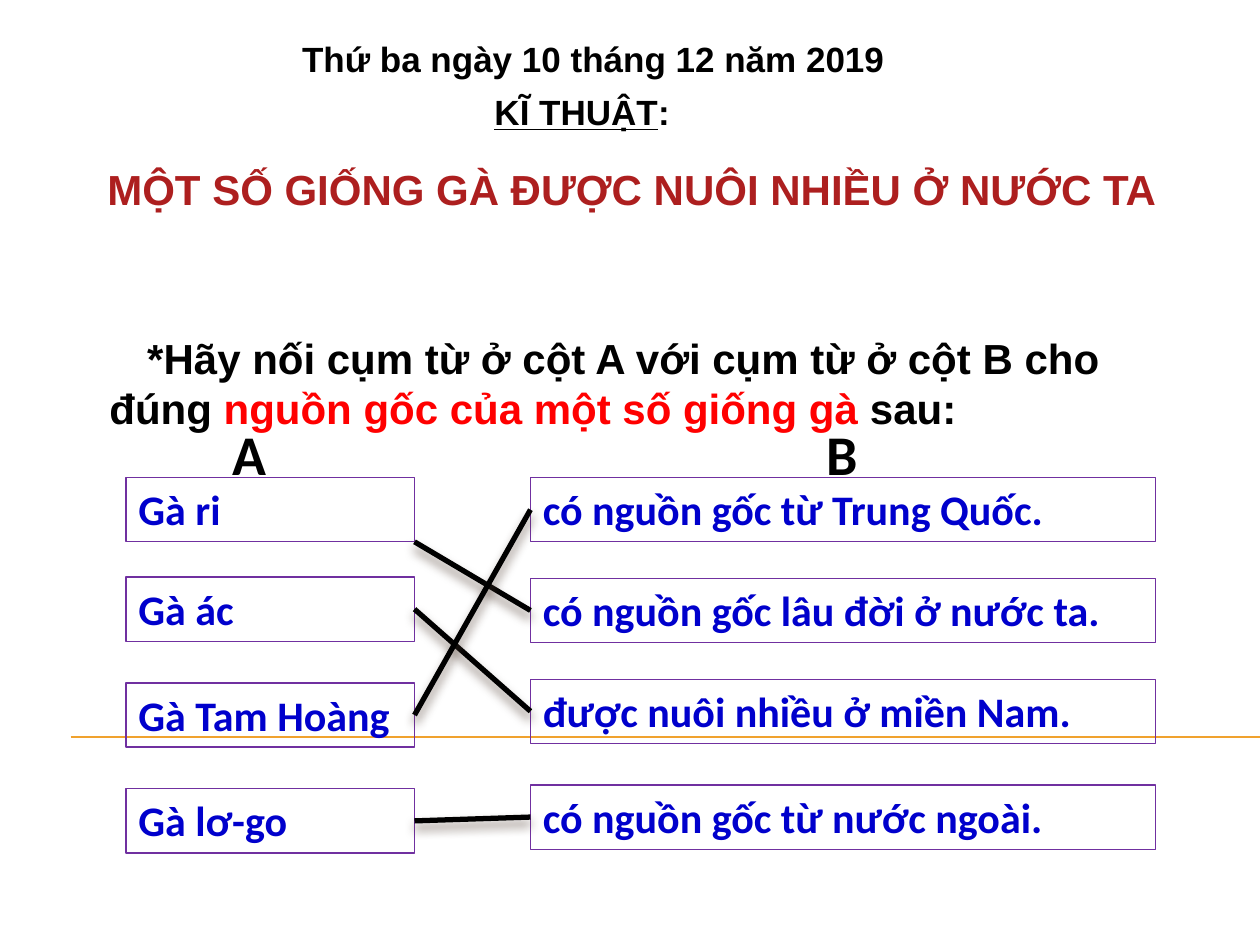
"""Build a matching exercise slide about the origins of chicken breeds."""
from lxml.etree import SubElement
from pptx import Presentation
from pptx.dml.color import RGBColor
from pptx.enum.shapes import MSO_CONNECTOR as CONN, MSO_SHAPE as SHAPE
from pptx.enum.text import MSO_ANCHOR as ANCHOR, PP_ALIGN as ALIGN
from pptx.oxml.ns import qn
from pptx.util import Emu, Inches, Pt

BLACK = RGBColor(0x00, 0x00, 0x00)
RED = RGBColor(0xFF, 0x00, 0x00)
CRIMSON = RGBColor(0xAD, 0x1F, 0x1F)
BLUE = RGBColor(0x00, 0x00, 0xCC)
PURPLE = RGBColor(0x70, 0x30, 0xA0)
ORANGE = RGBColor(0xF0, 0xA2, 0x2E)
SHADOW = "4E3B30"

HEADING = {"name": "Arial", "size": Pt(20), "bold": True}
LARGE = {**HEADING, "size": Pt(24)}
LETTER = {"name": "Calibri", "size": Pt(32), "bold": True}
ITEM = {**LETTER, "size": Pt(24)}

TEXTS = [
    ((2.08, 0.25, 5.26, 0.43), ALIGN.CENTER, {}, HEADING,
     [("Thứ ba ngày 10 tháng 12 năm 2019", BLACK, False)]),
    ((3.58, 0.67, 2.08, 0.43), ALIGN.CENTER, {}, HEADING,
     [("KĨ THUẬT", BLACK, True), (":", BLACK, False)]),
    ((0.25, 1.25, 9.25, 0.5), ALIGN.CENTER, {"marL": 0.28}, LARGE,
     [("MỘT SỐ GIỐNG GÀ ĐƯỢC NUÔI NHIỀU Ở NƯỚC TA", CRIMSON, False)]),
    ((0.77, 2.59, 8.92, 0.9), ALIGN.LEFT, {"indent": 0.3}, LARGE,
     [("*Hãy nối cụm từ ở cột A với cụm từ ở cột B cho đúng ", BLACK, False),
      ("nguồn gốc của một số giống gà", RED, False),
      (" sau:", BLACK, False)]),
    ((1.75, 3.28, 0.58, 0.64), ALIGN.LEFT, {}, LETTER, [("A", BLACK, False)]),
    ((6.46, 3.28, 0.58, 0.64), ALIGN.LEFT, {}, LETTER, [("B", BLACK, False)]),
]

BOX_H = 0.51
COLUMNS = [
    (1, 2.29, [("Gà ri", 3.79), ("Gà ác", 4.58),
               ("Gà Tam Hoàng", 5.42), ("Gà lơ-go", 6.26)]),
    (4.21, 4.96, [("có nguồn gốc từ Trung Quốc.", 3.79),
                  ("có nguồn gốc lâu đời ở nước ta.", 4.59),
                  ("được nuôi nhiều ở miền Nam.", 5.39),
                  ("có nguồn gốc từ nước ngoài.", 6.23)]),
]
CORNER_MATCH = (0, 1)
SIDE_MATCHES = [(1, 2), (2, 0), (3, 3)]


def write(sp, runs, font, align=ALIGN.LEFT, indents=None):
    tf = sp.text_frame
    tf.word_wrap = True
    tf.vertical_anchor = ANCHOR.TOP
    p = tf.paragraphs[0]
    p.alignment = align
    for key, inches in (indents or {}).items():
        p._p.get_or_add_pPr().set(key, str(Inches(inches)))
    for text, color, underline in runs:
        r = p.add_run()
        r.text = text
        for key, value in {**font, "underline": underline}.items():
            setattr(r.font, key, value)
        r.font.color.rgb = color


def add_item(s, text, x, y, w):
    sp = s.shapes.add_shape(SHAPE.RECTANGLE, *map(Inches, (x, y, w, BOX_H)))
    sp.shadow.inherit = False
    sp.fill.background()
    sp.line.color.rgb = PURPLE
    sp.line.width = Pt(0.75)
    write(sp, [(text, BLUE, False)], ITEM)
    return sp


def add_line(s, start, end, color, width):
    line = s.shapes.add_connector(CONN.STRAIGHT, *map(Emu, (*start, *end)))
    line.line.color.rgb = color
    line.line.width = Pt(width)
    return line, SubElement(line._element.spPr, qn("a:effectLst"))


def add_match(s, left, right, from_corner=False):
    start = (left.left + left.width, left.top + left.height)
    line, effects = add_line(s, start, (right.left, right.top), BLACK, 3)
    if not from_corner:
        line.begin_connect(left, 3)
    line.end_connect(right, 1)
    shadow = SubElement(effects, qn("a:outerShdw"), blurRad=str(Pt(6)),
                        dist=str(Pt(4)), dir="5400000", rotWithShape="0")
    color = SubElement(shadow, qn("a:srgbClr"), val=SHADOW)
    SubElement(color, qn("a:alpha"), val="60000")


def main():
    prs = Presentation()
    prs.slide_width, prs.slide_height = Inches(10), Inches(7.5)
    s = prs.slides.add_slide(prs.slide_layouts[6])
    rule_y = Inches(5.85)
    add_line(s, (Inches(0.56), rule_y), (prs.slide_width, rule_y), ORANGE, 0.75)
    for box, align, indents, font, runs in TEXTS:
        sp = s.shapes.add_textbox(*map(Inches, box))
        write(sp, runs, font, align, indents)
    breeds, origins = [[add_item(s, text, x, y, w) for text, y in items]
                       for x, w, items in COLUMNS]
    for a, b in [CORNER_MATCH, *SIDE_MATCHES]:
        add_match(s, breeds[a], origins[b], (a, b) == CORNER_MATCH)
    prs.save("out.pptx")


if __name__ == "__main__":
    main()
